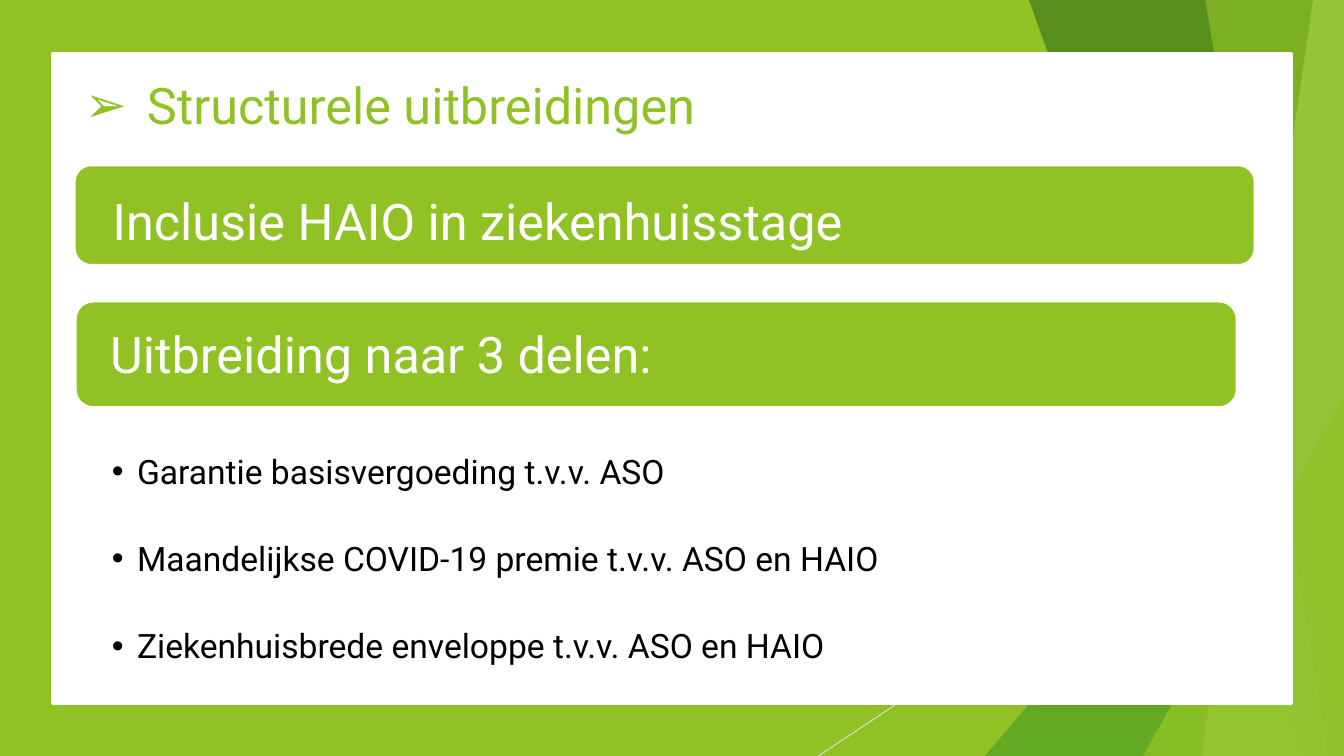
from lxml.etree import SubElement
from pptx import Presentation
from pptx.dml.color import RGBColor
from pptx.enum.shapes import MSO_CONNECTOR, MSO_SHAPE
from pptx.enum.text import MSO_ANCHOR, PP_ALIGN
from pptx.oxml.ns import qn
from pptx.util import Pt

COLORS = {
    "green": "90C226",
    "mid green": "54A021",
    "dark green": "3F7819",
    "light green": "C0E474",
    "grey": "D9D9D9",
    "white": "FFFFFF",
    "black": "000000",
}
WIDTH, HEIGHT = 960, 540


def paint(sp, fill, line_width=0, opacity=100):
    """Fill a shape, with a white outline if line_width is given."""
    sp.shadow.inherit = False
    sp.fill.solid()
    sp.fill.fore_color.rgb = RGBColor.from_string(COLORS[fill])
    if opacity < 100:
        color = sp.fill._xPr.find(qn("a:solidFill"))[0]
        SubElement(color, qn("a:alpha"), val=str(opacity * 1000))
    if line_width:
        sp.line.color.rgb = RGBColor.from_string(COLORS["white"])
        sp.line.width = Pt(line_width)
    else:
        sp.line.fill.background()


def write(sp, lines, size, color, insets, bullet=None, indent=0, gap=0):
    """Set left-aligned paragraphs; insets are left, top, right, bottom."""
    tf = sp.text_frame
    tf.word_wrap = True
    tf.vertical_anchor = MSO_ANCHOR.MIDDLE
    tf.margin_left, tf.margin_top, tf.margin_right, tf.margin_bottom = map(Pt, insets)
    tf.text = "\n".join(lines)
    for i, p in enumerate(tf.paragraphs):
        p.alignment = PP_ALIGN.LEFT
        p.space_before = Pt(gap if i else 0)
        font = p.runs[0].font
        font.name = "Roboto"
        font.size = Pt(size)
        font.color.rgb = RGBColor.from_string(COLORS[color])
        if bullet:
            pPr = p._p.get_or_add_pPr()
            pPr.set("marL", str(Pt(indent)))
            pPr.set("indent", str(-Pt(indent)))
            SubElement(pPr, qn("a:buFont"), typeface="Arial")
            SubElement(pPr, qn("a:buChar"), char=bullet)


prs = Presentation()
prs.slide_width, prs.slide_height = Pt(WIDTH), Pt(HEIGHT)
s = prs.slides.add_slide(prs.slide_layouts[6])

# Green background with a line and translucent facets along the right edge
background = s.shapes.add_shape(MSO_SHAPE.RECTANGLE, 0, 0, prs.slide_width, prs.slide_height)
paint(background, "green")

line = s.shapes.add_connector(MSO_CONNECTOR.STRAIGHT, Pt(WIDTH), Pt(290), Pt(584.6), Pt(HEIGHT))
line.line.color.rgb = RGBColor.from_string(COLORS["grey"])
line.line.width = Pt(0.75)
SubElement(line._element.spPr, qn("a:effectLst"))

# Top left x, top y, bottom left x, colour, opacity
facets = [
    (WIDTH, 240, 703.4, "mid green", 72),
    (735, 0, 929.5, "dark green", 70),
    (938, 0, 858.2, "light green", 70),
    (861, 0, 949, "green", 65),
    (WIDTH, 283, 816.5, "green", 80),
]
for top_x, top_y, bottom_x, color, opacity in facets:
    builder = s.shapes.build_freeform(Pt(top_x), Pt(top_y))
    corners = [(WIDTH, HEIGHT), (bottom_x, HEIGHT)]
    if top_x < WIDTH:
        corners.insert(0, (WIDTH, top_y))
    builder.add_line_segments([(Pt(x), Pt(y)) for x, y in corners], close=True)
    paint(builder.convert_to_shape(), color, opacity=opacity)

panel = s.shapes.add_shape(MSO_SHAPE.RECTANGLE, Pt(37.4), Pt(38.2), Pt(885), Pt(464.4))
paint(panel, "white", 1.75)

title = s.shapes.add_textbox(Pt(53.3), Pt(48.2), Pt(816), Pt(53.3))
write(title, ["Structurele uitbreidingen"], 36, "green", (7.2, 3.6, 7.2, 3.6), "➢", 44.6)

bars = [
    ("Inclusie HAIO in ziekenhuisstage", (53.3, 118, 843, 71.3), (23.5, 7, 10, 0)),
    ("Uitbreiding naar 3 delen:", (54, 215.3, 829.4, 75.6), (21, 0, 10, 2)),
]
for text, box, insets in bars:
    bar = s.shapes.add_shape(MSO_SHAPE.ROUNDED_RECTANGLE, *map(Pt, box))
    paint(bar, "green", 1.5)
    write(bar, [text], 36, "white", insets)

parts = s.shapes.add_textbox(Pt(53.3), Pt(323), Pt(843), Pt(151.4))
write(parts, [
    "Garantie basisvergoeding t.v.v. ASO",
    "Maandelijkse COVID-19 premie t.v.v. ASO en HAIO",
    "Ziekenhuisbrede enveloppe t.v.v. ASO en HAIO",
], 24, "black", (26.6, 0, 13.7, 0), "•", 18, 33.5)

prs.save("out.pptx")
